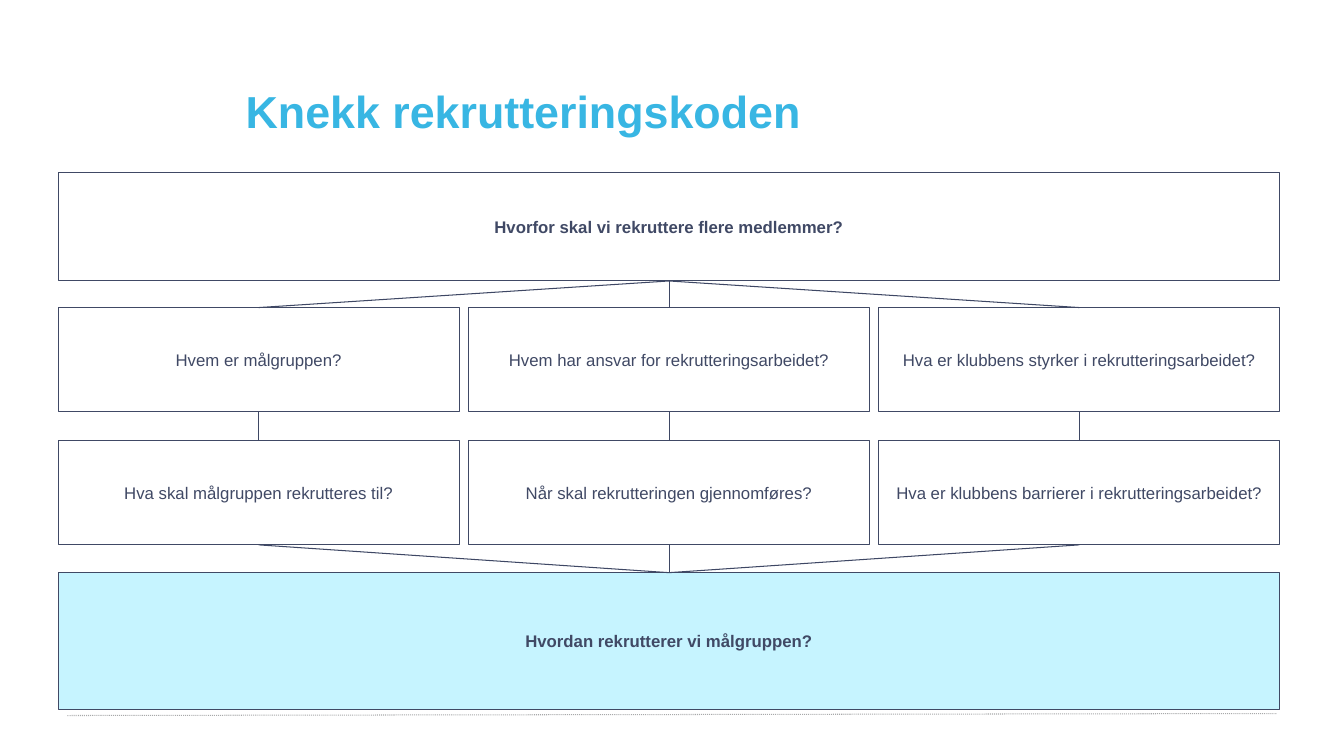
from lxml import etree
from pptx import Presentation
from pptx import util as u
from pptx.dml.color import RGBColor
from pptx.enum import dml, shapes, text
from pptx.oxml.ns import qn

TOP, BOTTOM = 0, 2
INK, RULE = "404965", "3E4764"


def color(value):
    return RGBColor.from_string(value)


class FlowSlide:
    """Holds the style and the current slide; lengths are in centimetres."""

    font = "Arial"
    line_width = u.Pt(0.75)

    def __init__(self, prs):
        self.slide = prs.slides.add_slide(prs.slide_layouts[6])

    def put_words(self, frame, words, hue, align, **font_format):
        frame.word_wrap = True
        paragraph = frame.paragraphs[0]
        paragraph.alignment = align
        run = paragraph.add_run()
        run.text = words
        for key, value in {"name": self.font, **font_format}.items():
            setattr(run.font, key, value)
        run.font.color.rgb = color(hue)

    def title(self, words, *place):
        frame = self.slide.shapes.add_textbox(*map(u.Cm, place)).text_frame
        self.put_words(frame, words, "38B6E3", text.PP_ALIGN.LEFT, size=u.Pt(32), bold=True)
        frame.auto_size = text.MSO_AUTO_SIZE.SHAPE_TO_FIT_TEXT

    def question(self, words, *place, fill=None, bold=False):
        box = self.slide.shapes.add_shape(shapes.MSO_SHAPE.RECTANGLE, *map(u.Cm, place))
        box.shadow.inherit = False
        if fill:
            box.fill.solid()
            box.fill.fore_color.rgb = color(fill)
        else:
            box.fill.background()
        box.line.color.rgb = color(INK)
        box.line.width = self.line_width
        box.text_frame.vertical_anchor = text.MSO_ANCHOR.MIDDLE
        self.put_words(box.text_frame, words, INK, text.PP_ALIGN.CENTER, size=u.Pt(12), bold=bold)
        return box

    def line(self, hue, *ends):
        link = self.slide.shapes.add_connector(shapes.MSO_CONNECTOR.STRAIGHT, *map(u.Cm, ends))
        link.line.color.rgb = color(hue)
        link.line.width = self.line_width
        etree.SubElement(link._element.spPr, qn("a:effectLst"))
        return link

    def join(self, upper, lower):
        link = self.line(RULE, 0, 0, 0, 0)
        link.begin_connect(upper, BOTTOM)
        link.end_connect(lower, TOP)


def main():
    prs = Presentation()
    prs.slide_width, prs.slide_height = u.Cm(33.87), u.Cm(19.05)
    flow = FlowSlide(prs)

    # Footer rule and title
    footer = flow.line("A8A9AA", 1.7, 18.03, 32.18, 17.98)
    footer.line.dash_style = dml.MSO_LINE.ROUND_DOT
    flow.title("Knekk rekrutteringskoden", 5.94, 1.98, 19.15, 1.63)

    # Opening and closing questions span all columns
    left, full_width = 1.47, 30.78
    why = flow.question("Hvorfor skal vi rekruttere flere medlemmer?",
                        left, 4.34, full_width, 2.74, bold=True)
    how = flow.question("Hvordan rekrutterer vi målgruppen?",
                        left, 14.43, full_width, 3.44, fill="C6F4FF", bold=True)

    # Three columns, each with an upper and a lower question
    columns = [
        ("Hvem er målgruppen?", "Hva skal målgruppen rekrutteres til?"),
        ("Hvem har ansvar for rekrutteringsarbeidet?", "Når skal rekrutteringen gjennomføres?"),
        ("Hva er klubbens styrker i rekrutteringsarbeidet?",
         "Hva er klubbens barrierer i rekrutteringsarbeidet?"),
    ]
    width, height, step = 10.1, 2.63, 10.34
    for index, (upper_words, lower_words) in enumerate(columns):
        x = left + index * step
        upper = flow.question(upper_words, x, 7.75, width, height)
        lower = flow.question(lower_words, x, 11.1, width, height)
        for pair in ((why, upper), (upper, lower), (lower, how)):
            flow.join(*pair)

    prs.save("out.pptx")


if __name__ == "__main__":
    main()
